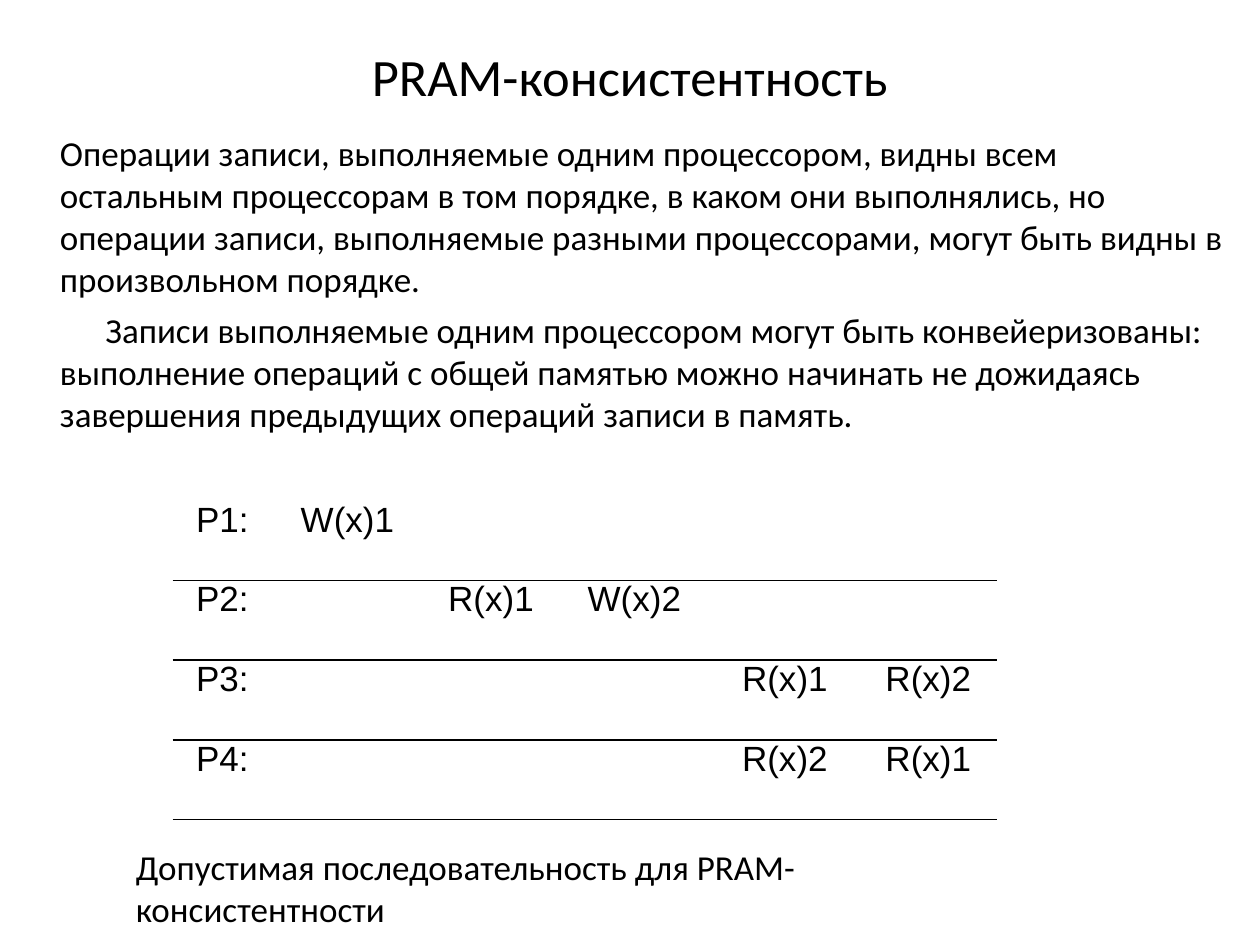
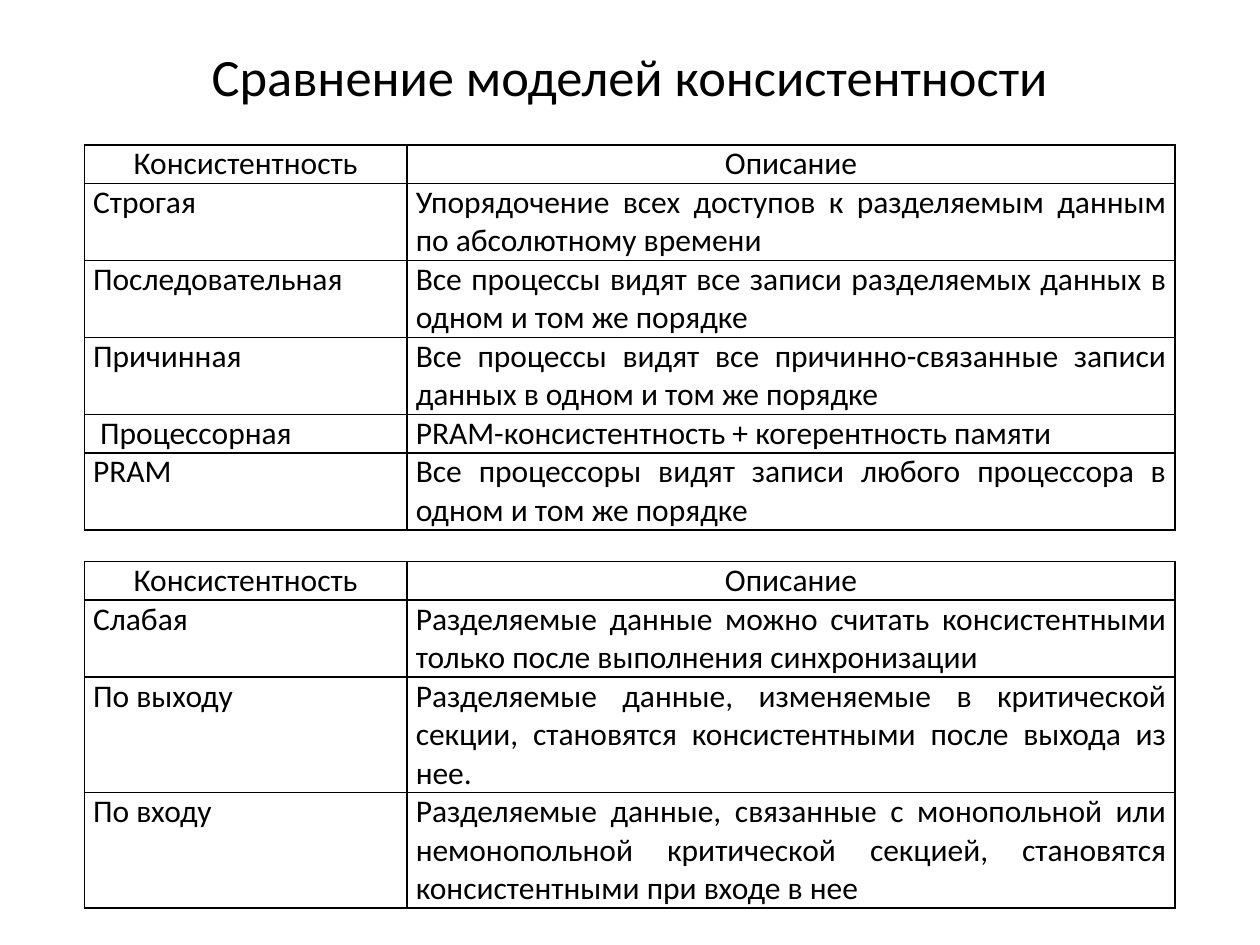
import lxml.etree
import pptx
import pptx.dml.color
import pptx.enum.text
import pptx.oxml.ns
import pptx.util

Pt = pptx.util.Pt
ALIGN = pptx.enum.text.PP_ALIGN
COLORS = {"text": "000000", "border": "000000"}
TITLE_FONT = BODY_FONT = "Calibri"
DIAGRAM_FONT = "Arial"
PLAIN_TABLE_STYLE = "{2D5ABB26-0587-4C30-8999-92F81FD0307C}"
LINE_HEIGHT = 22


def format_paragraph(paragraph, size, font=BODY_FONT, alignment=ALIGN.LEFT):
    paragraph.alignment = alignment
    for run in paragraph.runs:
        run.font.size = Pt(size)
        run.font.name = font
        run.font.color.rgb = pptx.dml.color.RGBColor.from_string(COLORS["text"])


def add_grid(slide, left, top, columns, heights, rows, size, font, body_alignment, borders):
    """Add an unfilled table; borders lists the ruled cell sides as letters from LRTB."""
    table = slide.shapes.add_table(
        len(rows), len(columns), Pt(left), Pt(top), Pt(sum(columns)), Pt(sum(heights))
    ).table
    table.first_row = table.horz_banding = False
    table._tbl.tblPr.find(pptx.oxml.ns.qn("a:tableStyleId")).text = PLAIN_TABLE_STYLE
    for column, width in zip(table.columns, columns):
        column.width = Pt(width)
    for row_index, texts in enumerate(rows):
        table.rows[row_index].height = Pt(heights[row_index])
        for column_index, text in enumerate(texts):
            cell = table.cell(row_index, column_index)
            cell.margin_left = cell.margin_right = Pt(5)
            cell.margin_top = cell.margin_bottom = 0
            cell.text_frame.text = text
            paragraph = cell.text_frame.paragraphs[0]
            paragraph.space_after = Pt(6)
            format_paragraph(paragraph, size, font, body_alignment if row_index else ALIGN.CENTER)
            properties = cell._tc.get_or_add_tcPr()
            for side in borders:
                line = lxml.etree.SubElement(
                    properties, pptx.oxml.ns.qn(f"a:ln{side}"), w=str(Pt(1)))
                fill = lxml.etree.SubElement(line, pptx.oxml.ns.qn("a:solidFill"))
                lxml.etree.SubElement(fill, pptx.oxml.ns.qn("a:srgbClr"), val=COLORS["border"])
            cell.fill.background()


presentation = pptx.Presentation()
presentation.slide_width, presentation.slide_height = Pt(720), Pt(540)

# Titles
slides = []
for heading in ("PRAM-консистентность", "Сравнение моделей консистентности"):
    slide = presentation.slides.add_slide(presentation.slide_layouts[5])
    title = slide.shapes.title
    title.left, title.top, title.width, title.height = Pt(25.5), Pt(-2), Pt(669), Pt(90)
    title.text_frame.text = heading
    title.text_frame.vertical_anchor = pptx.enum.text.MSO_ANCHOR.MIDDLE
    format_paragraph(title.text_frame.paragraphs[0], 30, TITLE_FONT, ALIGN.CENTER)
    slides.append(slide)
pram_slide, comparison_slide = slides

# PRAM consistency: left, top, width, height, then (first-line indent, text) pairs
text_blocks = [
    (27.2, 71.5, 679, 414, [
        (0, "Операции записи, выполняемые одним процессором, видны всем остальным "
            "процессорам в том порядке, в каком они выполнялись, но операции записи, "
            "выполняемые разными процессорами, могут быть видны в произвольном порядке."),
        (26, "Записи выполняемые одним процессором могут быть конвейеризованы: выполнение "
             "операций с общей памятью можно начинать не дожидаясь завершения предыдущих "
             "операций записи в память."),
    ]),
    (70.5, 479.5, 530, 60, [(0, "Допустимая последовательность для PRAM-консистентности")]),
]
for left, top, width, height, paragraphs in text_blocks:
    frame = pram_slide.shapes.add_textbox(Pt(left), Pt(top), Pt(width), Pt(height)).text_frame
    frame.word_wrap = True
    for index, (indent, text) in enumerate(paragraphs):
        paragraph = frame.add_paragraph() if index else frame.paragraphs[0]
        paragraph.text = text
        paragraph.space_before = Pt(5)
        paragraph._p.get_or_add_pPr().set("indent", str(Pt(indent)))
        format_paragraph(paragraph, 20)

operations = [
    ("P1:", "W(x)1", "", "", "", ""),
    ("P2:", "", "R(x)1", "W(x)2", "", ""),
    ("P3:", "", "", "", "R(x)1", "R(x)2"),
    ("P4:", "", "", "", "R(x)2", "R(x)1"),
]
add_grid(pram_slide, 98.6, 286, [57, 86, 78, 86, 86, 78], [45.6] * len(operations),
         operations, 20, DIAGRAM_FONT, ALIGN.CENTER, "B")

# Comparison of models: table top, then (line count, name, description) rows
header = (1, "Консистентность", "Описание")
model_tables = [
    (82.8, [
        header,
        (2, "Строгая", "Упорядочение всех доступов к разделяемым данным по абсолютному времени"),
        (2, "Последовательная",
         "Все процессы видят все записи разделяемых данных в одном и том же порядке"),
        (2, "Причинная",
         "Все процессы видят все причинно-связанные записи данных в одном и том же порядке"),
        (1, " Процессорная", "PRAM-консистентность + когерентность памяти"),
        (2, "PRAM", "Все процессоры видят записи любого процессора в одном и том же порядке"),
    ]),
    (321, [
        header,
        (2, "Слабая",
         "Разделяемые данные можно считать консистентными только после выполнения синхронизации"),
        (3, "По выходу",
         "Разделяемые данные, изменяемые в критической секции, становятся консистентными "
         "после выхода из нее."),
        (3, "По входу",
         "Разделяемые данные, связанные с монопольной или немонопольной критической секцией, "
         "становятся консистентными при входе в нее"),
    ]),
]
for top, models in model_tables:
    add_grid(comparison_slide, 48.2, top, [184.4, 439],
             [lines * LINE_HEIGHT for lines, name, description in models],
             [(name, description) for lines, name, description in models],
             18, BODY_FONT, ALIGN.JUSTIFY, "LRTB")

presentation.save("out.pptx")
